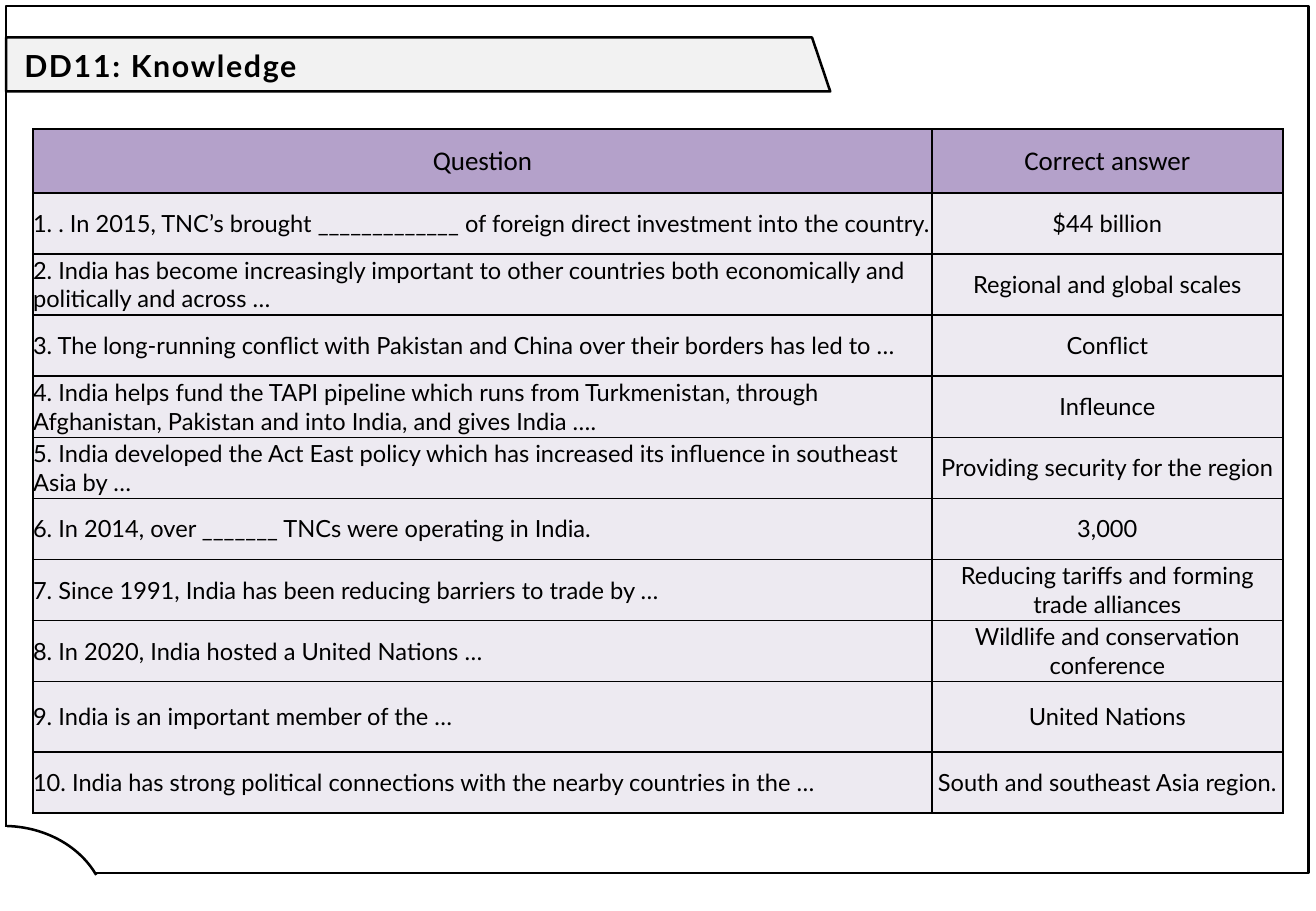
from dataclasses import dataclass

from lxml import etree
from pptx import Presentation
from pptx.dml.color import RGBColor as Rgb
from pptx.enum.shapes import MSO_SHAPE as Kind
from pptx.enum.text import MSO_ANCHOR as Anchor, PP_ALIGN as Align
from pptx.oxml.ns import qn
from pptx.util import Pt


@dataclass(frozen=True)
class Theme:
    ink: str = "000000"
    paper: str = "FFFFFF"
    tab: str = "F2F2F2"
    head: str = "B4A1CA"
    body: str = "EDEAF1"
    font: str = "Lato"
    head_font: str = "Calibri"
    title_size: float = 18
    head_size: float = 16
    body_size: float = 14
    line: float = 1.5
    rule: float = 1


LOOK = Theme()
HEADS = ("Question", "Correct answer")
ROWS = [
    ("1. . In 2015, TNC’s brought _____________ of foreign direct investment into the country.",
     "$44 billion"),
    ("2. India has become increasingly important to other countries both economically and "
     "politically and across …", "Regional and global scales"),
    ("3. The long-running conflict with Pakistan and China over their borders has led to …",
     "Conflict"),
    ("4. India helps fund the TAPI pipeline which runs from Turkmenistan, through "
     "Afghanistan, Pakistan and into India, and gives India ….", "Infleunce"),
    ("5. India developed the Act East policy which has increased its influence in southeast "
     "Asia by …", "Providing security for the region"),
    ("6. In 2014, over _______ TNCs were operating in India.", "3,000"),
    ("7. Since 1991, India has been reducing barriers to trade by …",
     "Reducing tariffs and forming trade alliances"),
    ("8. In 2020, India hosted a United Nations …", "Wildlife and conservation conference"),
    ("9. India is an important member of the …", "United Nations"),
    ("10. India has strong political connections with the nearby countries in the …",
     "South and southeast Asia region."),
]


def write(frame, text, size=LOOK.body_size, font=LOOK.font, bold=False,
          align=Align.LEFT, track=0):
    """Fill a text frame with one run; track is letter spacing in points."""
    para = frame.paragraphs[0]
    para.alignment = align
    run = para.add_run()
    run.text = text
    run.font.size = Pt(size)
    run.font.name = font
    run.font.bold = bold
    run.font.color.rgb = Rgb.from_string(LOOK.ink)
    if track:
        run.font._element.set("spc", str(track * 100))
    return para


def paint(shape, fill=None, line=LOOK.ink):
    shape.shadow.inherit = False
    if fill:
        shape.fill.solid()
        shape.fill.fore_color.rgb = Rgb.from_string(fill)
    else:
        shape.fill.background()
    if line:
        shape.line.color.rgb = Rgb.from_string(line)
        shape.line.width = Pt(LOOK.line)
    else:
        shape.line.fill.background()


def add_frame(slide, x, y, w, h):
    """Page border with a rounded bite out of its lower left corner."""
    def add(kind, *box):
        return slide.shapes.add_shape(kind, *map(Pt, box))

    paint(add(Kind.RECTANGLE, x, y, w, h))
    bite = add(Kind.ARC, x - 62.6, y + h - 28, 122.4, 104.4)
    bite.adjustments[0] = 162.525
    bite.adjustments[1] = 202.265
    paint(bite, LOOK.paper)
    paint(add(Kind.RECTANGLE, x - 2.9, y + h - 27.3, 3.6, 7.2), LOOK.paper, None)


def add_banner(slide, x, y, w, h):
    slant = 10.8
    pen = slide.shapes.build_freeform(Pt(x), Pt(y))
    pen.add_line_segments([(Pt(x + w - slant), Pt(y)), (Pt(x + w), Pt(y + h)),
                           (Pt(x), Pt(y + h))], close=True)
    paint(pen.convert_to_shape(), LOOK.tab)


def add_title(slide, text, x, y, w, h):
    title = slide.shapes.title
    title.left, title.top, title.width, title.height = map(Pt, (x, y, w, h))
    frame = title.text_frame
    frame.word_wrap = True
    frame.vertical_anchor = Anchor.MIDDLE
    para = write(frame, text, size=LOOK.title_size, bold=True, track=1)
    para.line_spacing = 1.07
    para.space_after = Pt(8)
    title.element.getparent().append(title.element)  # in front of the banner


def edge(cell):
    props = cell._tc.get_or_add_tcPr()
    for side in ("lnL", "lnR", "lnT", "lnB"):
        line = etree.SubElement(props, qn("a:" + side), w=str(Pt(LOOK.rule)))
        fill = etree.SubElement(line, qn("a:solidFill"))
        etree.SubElement(fill, qn("a:srgbClr"), val=LOOK.ink)


def add_quiz(slide, x, y, cols, highs):
    """Table of questions and answers, with the given widths and heights."""
    data = [HEADS, *ROWS]
    box = map(Pt, (x, y, sum(cols), sum(highs)))
    table = slide.shapes.add_table(len(data), len(cols), *box).table
    table.first_row = table.horz_banding = False
    for col, wide in zip(table.columns, cols):
        col.width = Pt(wide)
    for r, (texts, high) in enumerate(zip(data, highs)):
        table.rows[r].height = Pt(high)
        form = {"size": LOOK.head_size, "font": LOOK.head_font} if r == 0 else {}
        for c, text in enumerate(texts):
            cell = table.cell(r, c)
            edge(cell)
            cell.fill.solid()
            cell.fill.fore_color.rgb = Rgb.from_string(LOOK.body if r else LOOK.head)
            cell.margin_left = cell.margin_right = 0
            cell.margin_top = cell.margin_bottom = 0
            cell.vertical_anchor = Anchor.MIDDLE
            align = Align.LEFT if r and c == 0 else Align.CENTER
            write(cell.text_frame, text, align=align, **form)


def main():
    deck = Presentation()
    deck.slide_width, deck.slide_height = Pt(780), Pt(540)
    slide = deck.slides.add_slide(deck.slide_layouts[5])
    add_banner(slide, 3.6, 22.2, 488.5, 32)
    add_frame(slide, 3.6, 3.6, 772, 514)
    add_quiz(slide, 19.6, 76.4, (532.8, 208), (38, *[36.2] * 8, 41.8, 36.2))
    add_title(slide, "DD11: Knowledge", 7.2, 15.2, 463, 45.4)
    deck.save("out.pptx")


if __name__ == "__main__":
    main()
